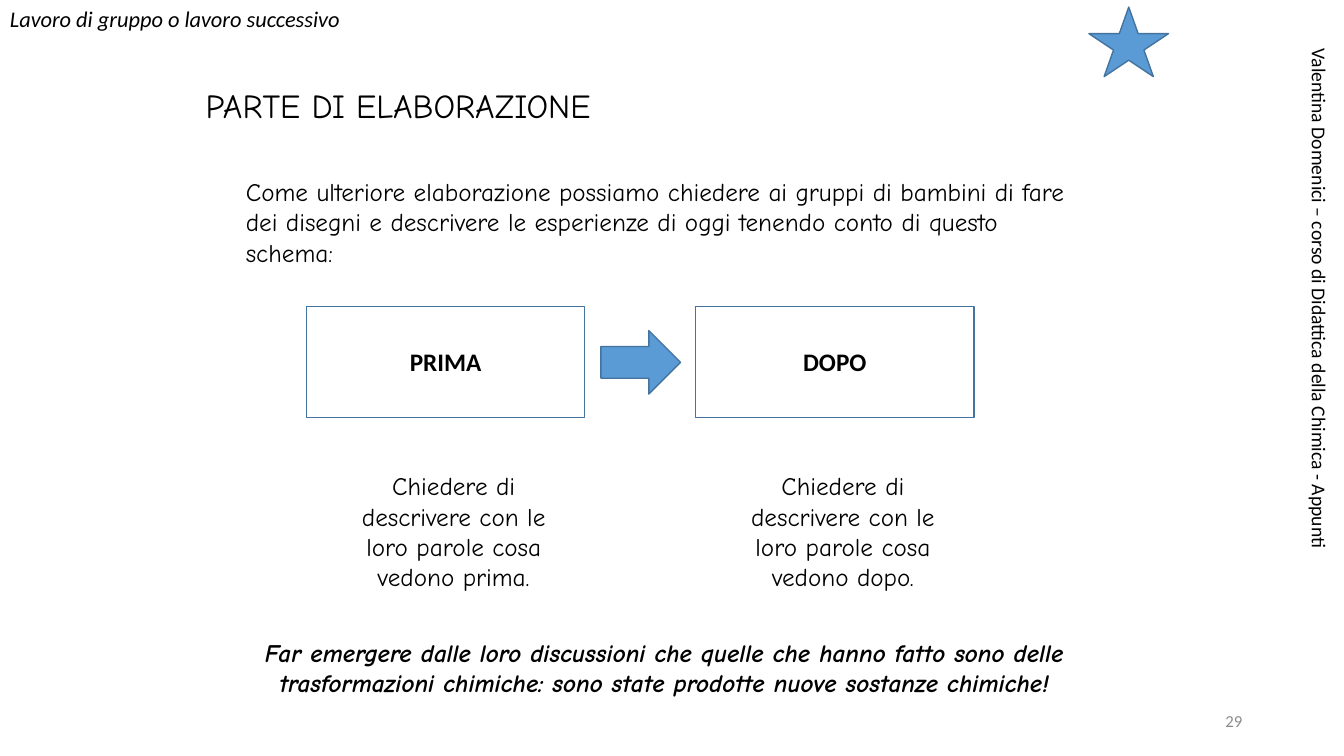
"""Builds the before-and-after elaboration slide."""
from pptx import Presentation
from pptx.dml.color import RGBColor
from pptx.enum.shapes import MSO_SHAPE as Shape
from pptx.enum.text import MSO_ANCHOR as Anchor, PP_ALIGN as Align
from pptx.util import Inches, Pt

TITLE = "PARTE DI ELABORAZIONE"
HEADER = "Lavoro di gruppo o lavoro successivo"
INTRO = ("Come ulteriore elaborazione possiamo chiedere ai gruppi di bambini di fare "
         "dei disegni e descrivere le esperienze di oggi tenendo conto di questo schema:")
STAGES = [
    ("PRIMA", "Chiedere di descrivere con le loro parole cosa vedono prima."),
    ("DOPO", "Chiedere di descrivere con le loro parole cosa vedono dopo."),
]
CONCLUSION = ("Far emergere dalle loro discussioni che quelle che hanno fatto sono delle "
              "trasformazioni chimiche: sono state prodotte nuove sostanze chimiche!")
CREDIT = "Valentina Domenici – corso di Didattica della Chimica - Appunti"
PAGE_NUMBER = "29"

BLACK = RGBColor(0x00, 0x00, 0x00)
GRAY = RGBColor(0x8C, 0x8C, 0x8C)
BLUE = RGBColor(0x5B, 0x9B, 0xD5)
DARK_BLUE = RGBColor(0x43, 0x73, 0x9E)
COMIC, PLAIN = "Comic Neue", "Calibri"
STAGE_LEFT, STAGE_STEP = 3.04, 3.86


def write(box, text, size=18, name=COMIC, color=BLACK, align=Align.LEFT,
          anchor=Anchor.TOP, bold=False, italic=False, wrap=True):
    frame = box.text_frame
    frame.word_wrap = wrap
    frame.vertical_anchor = anchor
    para = frame.paragraphs[0]
    para.text = text
    para.alignment = align
    font = para.font
    font.size, font.name, font.bold, font.italic = Pt(size), name, bold, italic
    font.color.rgb = color
    return para


def add_text(page, place, text, **style):
    box = page.shapes.add_textbox(*map(Inches, place))
    write(box, text, **style)
    return box


def add_figure(page, kind, place, fill=None):
    figure = page.shapes.add_shape(kind, *map(Inches, place))
    figure.shadow.inherit = False
    if fill is None:
        figure.fill.background()
    else:
        figure.fill.solid()
        figure.fill.fore_color.rgb = fill
    figure.line.color.rgb = DARK_BLUE
    figure.line.width = Pt(1)
    return figure


def main():
    deck = Presentation()
    deck.slide_width, deck.slide_height = Inches(13.33), Inches(7.5)
    page = deck.slides.add_slide(deck.slide_layouts[6])

    title = add_text(page, (1.94, 0.52, 9, 1.1), TITLE, size=24, anchor=Anchor.MIDDLE)
    title.text_frame.paragraphs[0].line_spacing = 0.9
    add_figure(page, Shape.STAR_5_POINT, (10.8, 0.07, 0.79, 0.69), BLUE)
    add_text(page, (0, 0, 3.52, 0.37), HEADER, size=16, name=PLAIN, italic=True, wrap=False)
    add_text(page, (2.34, 1.7, 8.5, 1.01), INTRO)

    for index, (label, request) in enumerate(STAGES):
        left = STAGE_LEFT + index * STAGE_STEP
        stage = add_figure(page, Shape.RECTANGLE, (left, 3.04, 2.76, 1.1))
        write(stage, label, name=PLAIN, align=Align.CENTER, anchor=Anchor.MIDDLE, bold=True)
        add_text(page, (left + 0.24, 4.62, 2.44, 1.31), request, align=Align.CENTER)
    add_figure(page, Shape.RIGHT_ARROW, (5.96, 3.28, 0.79, 0.63), BLUE)

    add_text(page, (2.34, 6.27, 8.5, 1.01), CONCLUSION, align=Align.CENTER,
             bold=True, italic=True)
    add_text(page, (9.42, 6.95, 3, 0.4), PAGE_NUMBER, size=12, name=PLAIN, color=GRAY,
             align=Align.RIGHT, anchor=Anchor.MIDDLE)
    credit = add_text(page, (9.95, 3.35, 6.27, 0.34), CREDIT, size=14, name=PLAIN)
    credit.rotation = 90

    deck.save("out.pptx")


if __name__ == "__main__":
    main()
